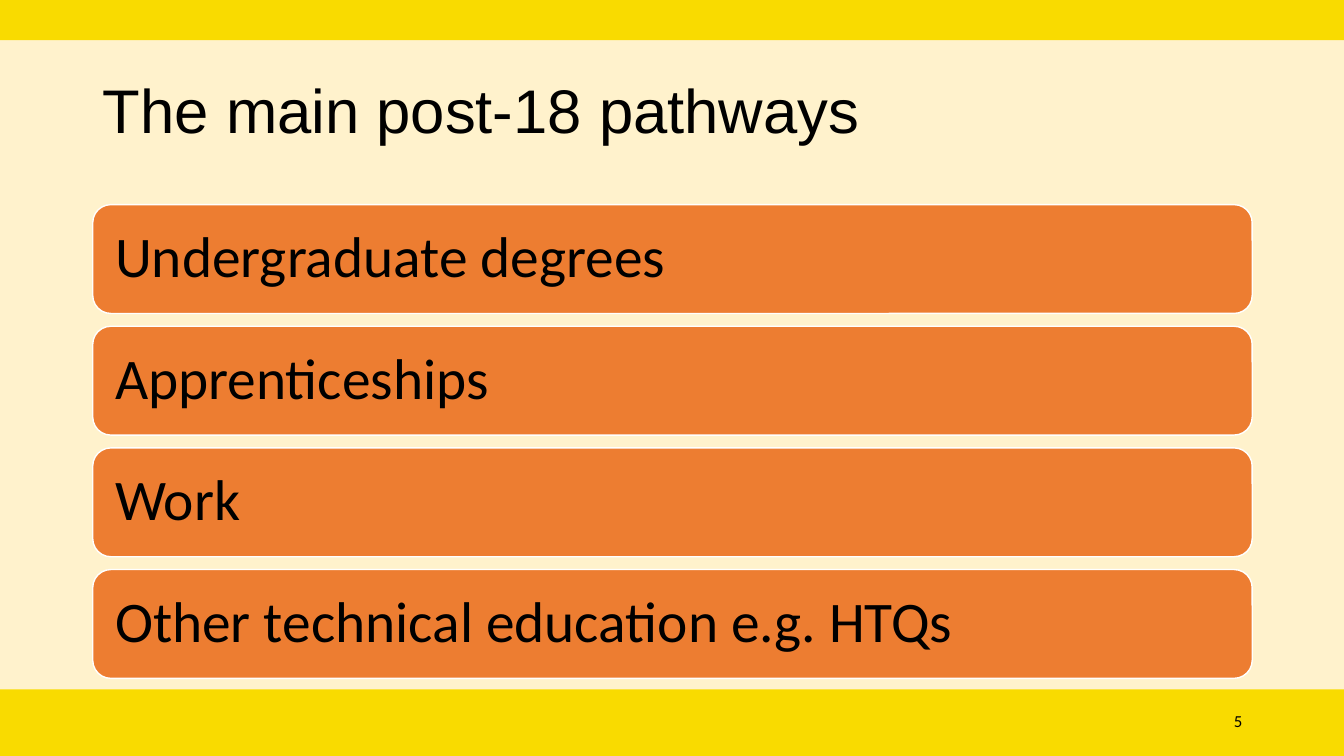
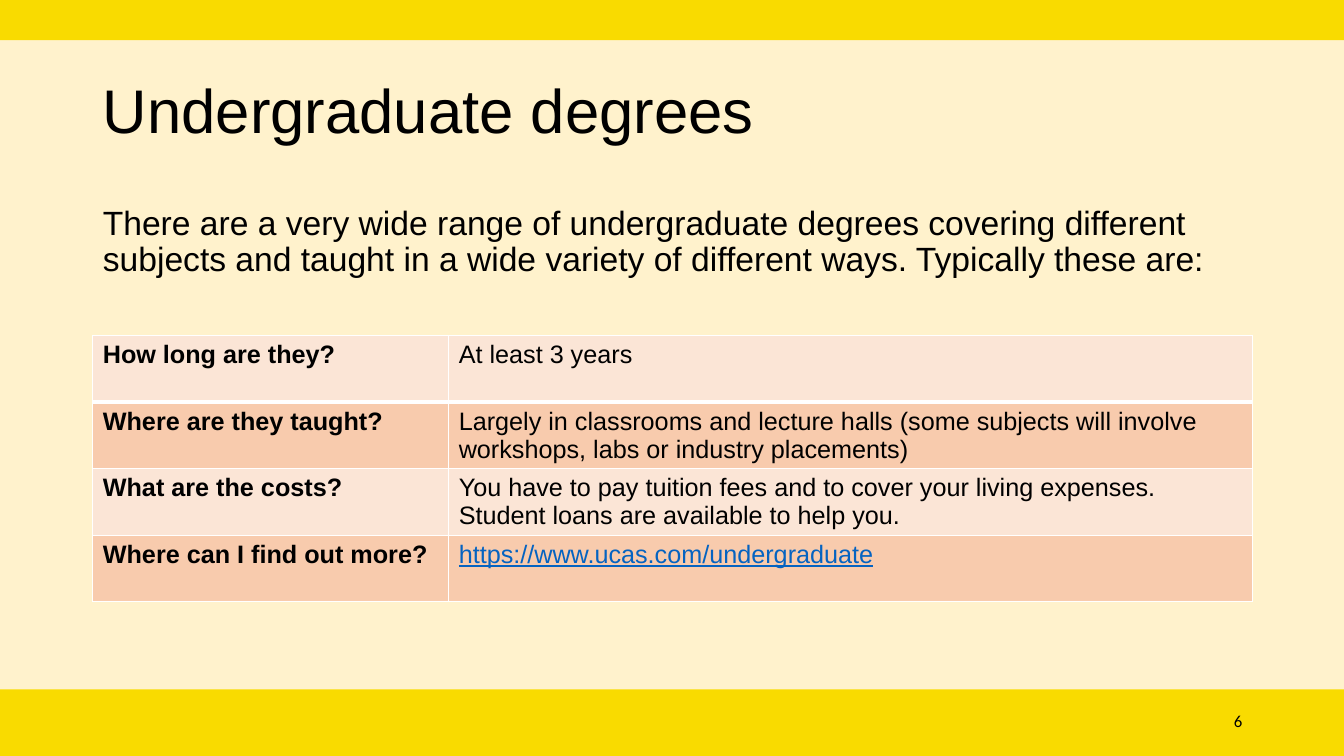
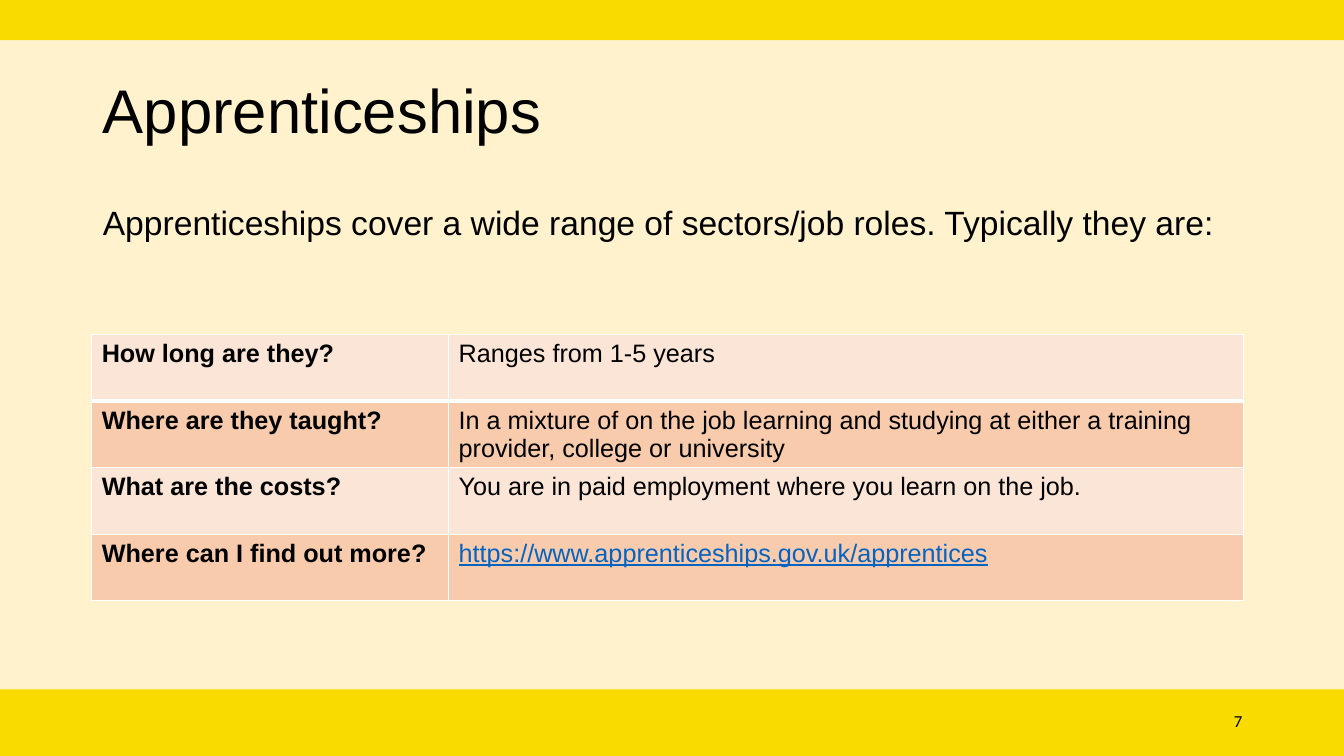
import dataclasses

import lxml.etree
import pptx
import pptx.dml.color
import pptx.enum.shapes
import pptx.enum.text
import pptx.oxml.ns
import pptx.util

Inches = pptx.util.Inches
ANCHOR = pptx.enum.text.MSO_ANCHOR
ALIGN = pptx.enum.text.PP_ALIGN
SHAPE = pptx.enum.shapes.MSO_SHAPE
WIDE, HIGH = 13.33, 7.5


@dataclasses.dataclass(frozen=True)
class Theme:
    page: str = "FFF2CC"
    band: str = "F9DB00"
    bar: str = "ED7D31"
    pale: str = "FBE5D6"
    deep: str = "F8CBAD"
    ink: str = "000000"
    rule: str = "FFFFFF"
    link: str = "0563C1"
    head: str = "Arial"
    text: str = "Calibri"
    title: int = 44
    label: int = 41
    body: int = 24
    cell: int = 18
    foot: int = 12


THEME = Theme()
TITLE_BOX = (0.92, 0.4, 10.04, 1.45)
FOOT_BOX = (9.42, 6.95, 3, 0.4)
ASKS = (
    "How long are they?",
    "Where are they taught?",
    "What are the costs?",
    "Where can I find out more?",
)


# Shared helpers
def rgb(code):
    return pptx.dml.color.RGBColor.from_string(code)


def paint(fill, code):
    fill.solid()
    fill.fore_color.rgb = rgb(code)


def inch(box):
    return [Inches(part) for part in box]


def place(shape, box):
    shape.left, shape.top, shape.width, shape.height = inch(box)


def write(par, text, size, face, code=THEME.ink, bold=False, line=False):
    run = par.add_run()
    run.text = text
    font = run.font
    font.size = pptx.util.Pt(size)
    font.name = face
    font.color.rgb = rgb(code)
    font.bold = bold
    font.underline = line


def frame_of(shape, anchor):
    frame = shape.text_frame
    frame.word_wrap = True
    frame.auto_size = pptx.enum.text.MSO_AUTO_SIZE.NONE
    frame.vertical_anchor = anchor
    return frame


def tight(par):
    par.line_spacing = 0.9
    par.space_before = pptx.util.Pt(0)
    par.alignment = ALIGN.LEFT


# Page colour and the two bands, held by the master
def set_master(deck, slide):
    master = deck.slide_master
    paint(master.background.fill, THEME.page)
    bands = ((0, 0, WIDE, 0.4), (0, 6.84, WIDE, HIGH - 6.84))
    for num, box in enumerate(bands):
        band = slide.shapes.add_shape(SHAPE.RECTANGLE, *inch(box))
        band.shadow.inherit = False
        paint(band.fill, THEME.band)
        band.line.fill.background()
        band.element.nvSpPr.cNvPr.set("id", str(20 + num))
        master.shapes.element.insert(2 + num, band.element)


# Title and page number
def add_slide(deck, kind, title, page):
    slide = deck.slides.add_slide(deck.slide_layouts.get_by_name(kind))
    place(slide.shapes.title, TITLE_BOX)
    par = frame_of(slide.shapes.title, ANCHOR.MIDDLE).paragraphs[0]
    tight(par)
    write(par, title, THEME.title, THEME.head)

    foot = slide.shapes.add_textbox(*inch(FOOT_BOX))
    par = frame_of(foot, ANCHOR.MIDDLE).paragraphs[0]
    par.alignment = ALIGN.RIGHT
    write(par, str(page), THEME.foot, THEME.text)
    return slide


# Stack of equal bars
def add_bars(slide, box, names, tall=1.08):
    left, top, width, height = box
    step = (height - tall) / (len(names) - 1)
    for row, name in enumerate(names):
        spot = (left, top + row * step, width, tall)
        bar = slide.shapes.add_shape(SHAPE.ROUNDED_RECTANGLE, *inch(spot))
        bar.shadow.inherit = False
        paint(bar.fill, THEME.bar)
        bar.line.color.rgb = rgb(THEME.rule)
        bar.line.width = pptx.util.Pt(1)
        frame = frame_of(bar, ANCHOR.MIDDLE)
        frame.margin_left = frame.margin_right = Inches(0.17)
        par = frame.paragraphs[0]
        tight(par)
        write(par, name, THEME.label, THEME.text)


# Lead text without a bullet
def add_lead(slide, box, text):
    body = slide.placeholders[1]
    place(body, box)
    par = frame_of(body, ANCHOR.TOP).paragraphs[0]
    props = par._p.get_or_add_pPr()
    props.set("marL", "0")
    props.set("indent", "0")
    lxml.etree.SubElement(props, pptx.oxml.ns.qn("a:buNone"))
    tight(par)
    write(par, text, THEME.body, THEME.head)


def edge(cell, sides):
    props = cell._tc.get_or_add_tcPr()
    name = pptx.oxml.ns.qn
    for spot, (side, points) in enumerate(sides.items()):
        line = lxml.etree.Element(name("a:ln" + side), w=str(pptx.util.Pt(points)))
        fill = lxml.etree.SubElement(line, name("a:solidFill"))
        lxml.etree.SubElement(fill, name("a:srgbClr"), val=THEME.rule)
        props.insert(spot, line)


# Table of questions and answers
def add_facts(slide, box, split, facts):
    left, top, width, height = box
    table = slide.shapes.add_table(len(ASKS), 2, *inch(box)).table
    table.first_row = table.horz_banding = False
    table.columns[0].width = Inches(split)
    table.columns[1].width = Inches(width - split)
    for row, pair in enumerate(zip(ASKS, facts)):
        table.rows[row].height = Inches(height / len(ASKS))
        for col, text in enumerate(pair):
            cell = table.cell(row, col)
            paint(cell.fill, THEME.deep if row % 2 else THEME.pale)
            edge(cell, {"L": 1, "R": 1, "T": 3 if row == 1 else 1,
                        "B": 3 if row == 0 else 1})
            web = text.startswith("https:")
            write(cell.text_frame.paragraphs[0], text, THEME.cell, THEME.head,
                  THEME.link if web else THEME.ink, bold=col == 0, line=web)


# Slide types
def list_slide(deck, page, title, names):
    slide = add_slide(deck, "Title Only", title, page)
    add_bars(slide, (0.92, 2.03, 11.5, 4.7), names)
    return slide


def fact_slide(deck, page, title, lead, box, split, facts):
    slide = add_slide(deck, "Title and Content", title, page)
    add_lead(slide, (0.92, 2, 11.5, 4.76), lead)
    add_facts(slide, box, split, facts)


def main():
    deck = pptx.Presentation()
    deck.slide_width, deck.slide_height = Inches(WIDE), Inches(HIGH)

    first = list_slide(deck, 5, "The main post-18 pathways", (
        "Undergraduate degrees",
        "Apprenticeships",
        "Work",
        "Other technical education e.g. HTQs",
    ))
    set_master(deck, first)

    fact_slide(
        deck, 6, "Undergraduate degrees",
        "There are a very wide range of undergraduate degrees covering different "
        "subjects and taught in a wide variety of different ways. "
        "Typically these are:",
        (0.92, 3.33, 11.5, 2.64), 3.53, (
            "At least 3 years",
            "Largely in classrooms and lecture halls (some subjects will involve "
            "workshops, labs or industry placements)",
            "You have to pay tuition fees and to cover your living expenses. "
            "Student loans are available to help you.",
            "https://www.ucas.com/undergraduate",
        ))

    fact_slide(
        deck, 7, "Apprenticeships",
        "Apprenticeships cover a wide range of sectors/job roles. "
        "Typically they are:",
        (0.91, 3.32, 11.42, 2.64), 3.54, (
            "Ranges from 1-5 years",
            "In a mixture of on the job learning and studying at either a training "
            "provider, college or university",
            "You are in paid employment where you learn on the job.",
            "https://www.apprenticeships.gov.uk/apprentices",
        ))
    deck.save("out.pptx")


if __name__ == "__main__":
    main()
